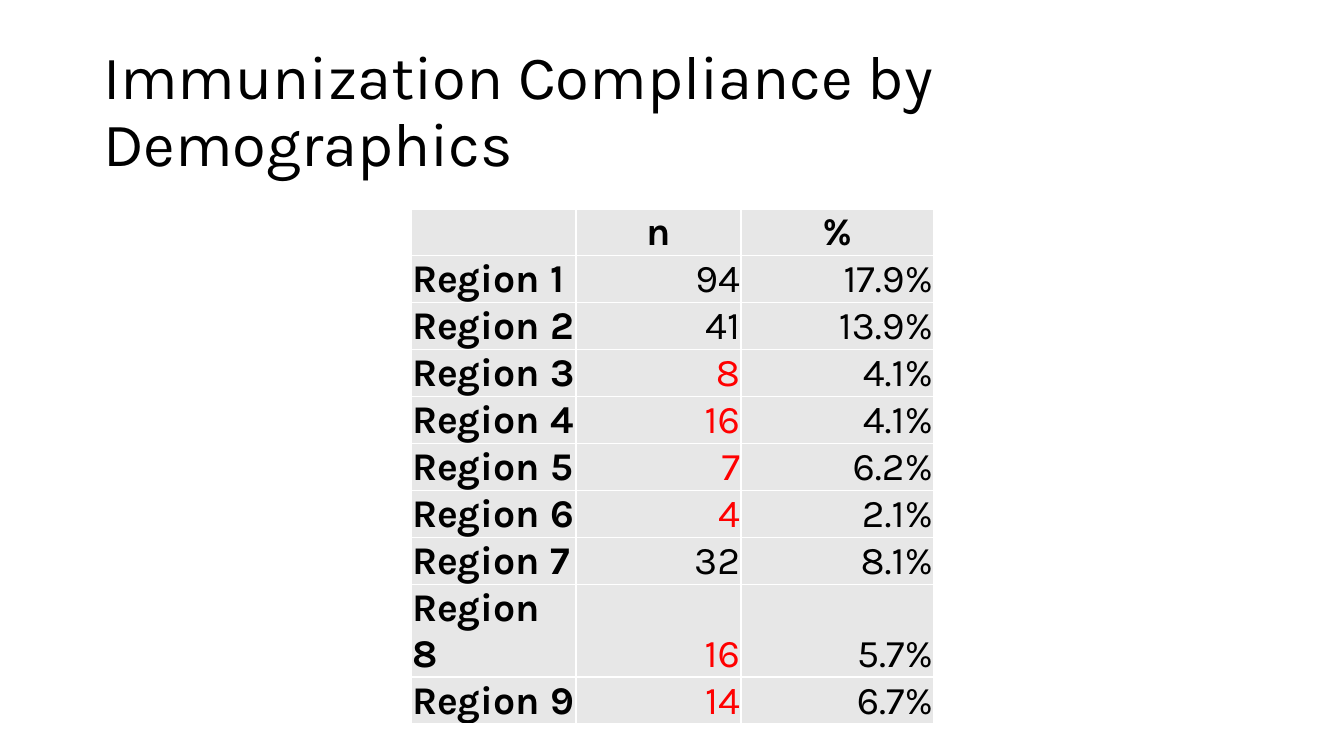
import pptx
import pptx.util
import pptx.dml.color
import pptx.enum.text
import pptx.oxml
import pptx.oxml.ns

RGB = pptx.dml.color.RGBColor
ALIGN = pptx.enum.text.PP_ALIGN
ANCHOR = pptx.enum.text.MSO_ANCHOR

BLACK = RGB(0x00, 0x00, 0x00)
RED = RGB(0xFF, 0x00, 0x00)
GRAY = RGB(0xE7, 0xE7, 0xE7)
WHITE = RGB(0xFF, 0xFF, 0xFF)

SCALE = 914400 / 100.8
FACE = "Karla"
LOW = 20  # counts below this are shown in red

TITLE = "Immunization Compliance by Demographics"
HEAD = ("", "n", "%")
DATA = [
    (94, "17.9%"),
    (41, "13.9%"),
    (8, "4.1%"),
    (16, "4.1%"),
    (7, "6.2%"),
    (4, "2.1%"),
    (32, "8.1%"),
    (16, "5.7%"),
    (14, "6.7%"),
]
WIDTHS = (165, 165, 193)
ROW = 45
CELL = {
    "margin_left": 1,
    "margin_top": 1,
    "margin_right": 1,
    "margin_bottom": 0,
}


def px(size):
    return pptx.util.Emu(round(size * SCALE))


def put(item, values):
    """Set each named attribute of item."""
    for name, value in values.items():
        setattr(item, name, value)


def style(font, size, color, bold=False):
    put(font, {"name": FACE, "size": pptx.util.Pt(size), "bold": bold})
    font.color.rgb = color


def border(cell, color):
    """Draw a 1 pt line on all four sides; call before the fill is set."""
    props = cell._tc.get_or_add_tcPr()
    for side in "LRTB":
        props.append(pptx.oxml.parse_xml(
            f'<a:ln{side} {pptx.oxml.ns.nsdecls("a")} w="12700">'
            f'<a:solidFill><a:srgbClr val="{color}"/></a:solidFill>'
            f'</a:ln{side}>'))


def add_title(slide, left, top, width, height):
    title = slide.shapes.title
    put(title, {"left": px(left), "top": px(top),
                "width": px(width), "height": px(height)})
    frame = title.text_frame
    frame.text = TITLE
    put(frame, {"word_wrap": True, "vertical_anchor": ANCHOR.MIDDLE,
                "auto_size": pptx.enum.text.MSO_AUTO_SIZE.NONE})
    para = frame.paragraphs[0]
    put(para, {"alignment": ALIGN.LEFT, "line_spacing": 0.9})
    style(para.runs[0].font, 44, BLACK)


def fill_cell(cell, text, align, color, bold):
    put(cell, {name: px(size) for name, size in CELL.items()})
    cell.vertical_anchor = ANCHOR.BOTTOM
    border(cell, WHITE)
    cell.fill.solid()
    cell.fill.fore_color.rgb = GRAY
    if text:
        cell.text = text
        para = cell.text_frame.paragraphs[0]
        para.alignment = align
        style(para.runs[0].font, 28, color, bold)


def add_rates(slide, left, top):
    """Place the table of regions with its corner at left, top."""
    rows = [HEAD] + [(f"Region {i}", str(n), rate)
                     for i, (n, rate) in enumerate(DATA, 1)]
    table = slide.shapes.add_table(
        len(rows), len(HEAD), px(left), px(top),
        px(sum(WIDTHS)), px(ROW * len(rows))).table
    table.horz_banding = False
    for col, width in zip(table.columns, WIDTHS):
        col.width = px(width)
    for r, row in enumerate(rows):
        table.rows[r].height = px(ROW)
        for c, text in enumerate(row):
            align = (ALIGN.CENTER if r == 0
                     else ALIGN.LEFT if c == 0 else ALIGN.RIGHT)
            low = r > 0 and c == 1 and int(text) < LOW
            fill_cell(table.cell(r, c), text, align,
                      RED if low else BLACK, r == 0 or c == 0)


def main():
    deck = pptx.Presentation()
    put(deck, {"slide_width": px(1344), "slide_height": px(756)})
    slide = deck.slides.add_slide(deck.slide_layouts.get_by_name("Title Only"))
    add_title(slide, 93, 40, 1159, 146)
    add_rates(slide, 411, 209)
    deck.save("out.pptx")


if __name__ == "__main__":
    main()
